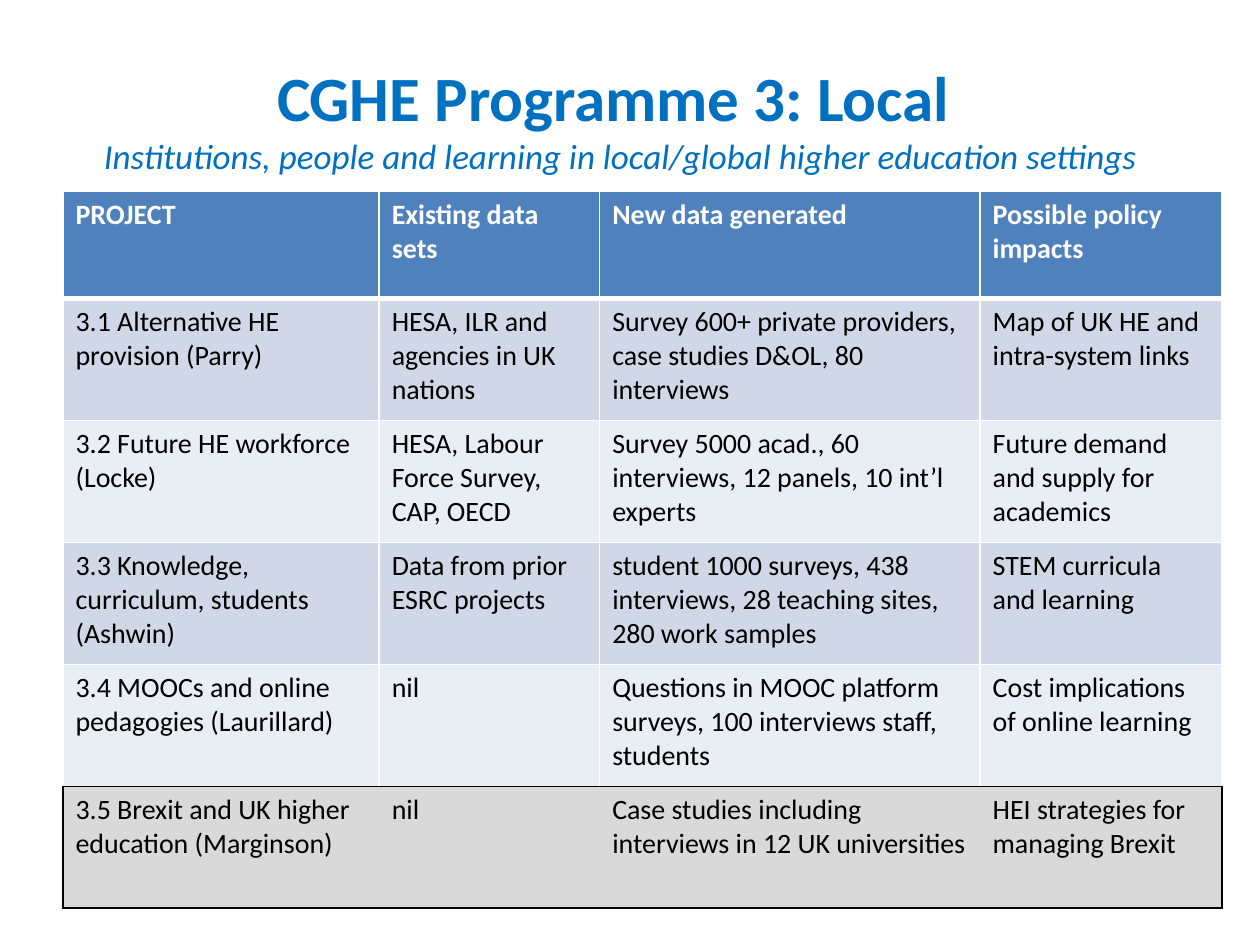
from lxml.etree import SubElement
from pptx import Presentation
from pptx.dml.color import RGBColor
from pptx.enum.text import MSO_ANCHOR, PP_ALIGN
from pptx.oxml.ns import qn
from pptx.util import Pt

BLUE = RGBColor(0x00, 0x70, 0xC0)
HEAD = RGBColor(0x4F, 0x81, 0xBD)
DARK = RGBColor(0xD0, 0xD8, 0xE8)
LIGHT = RGBColor(0xE9, 0xED, 0xF4)
GREY = RGBColor(0xD9, 0xD9, 0xD9)
WHITE = RGBColor(0xFF, 0xFF, 0xFF)
BLACK = RGBColor(0x00, 0x00, 0x00)


def write(para, text, size=16, color=BLACK, bold=False, italic=False):
    run = para.add_run()
    run.text = text
    font = run.font
    font.name = "Calibri"
    font.size = Pt(size)
    font.bold = bold
    font.italic = italic
    font.color.rgb = color


def edge(cell, side, color, width=1):
    props = cell._tc.get_or_add_tcPr()
    line = SubElement(props, qn("a:ln" + side), w=str(Pt(width)))
    if color is None:
        SubElement(line, qn("a:noFill"))
    else:
        fill = SubElement(line, qn("a:solidFill"))
        SubElement(fill, qn("a:srgbClr"), val=str(color))


deck = Presentation()
deck.slide_width = Pt(720)
deck.slide_height = Pt(540)
slide = deck.slides.add_slide(deck.slide_layouts[6])

title = slide.shapes.add_textbox(Pt(36), Pt(21.6), Pt(637.2), Pt(91.4))
frame = title.text_frame
frame.word_wrap = True
frame.vertical_anchor = MSO_ANCHOR.MIDDLE
para = frame.paragraphs[0]
para.alignment = PP_ALIGN.CENTER
write(para, "CGHE Programme 3: Local ", size=36, color=BLUE, bold=True)
para.add_line_break()
write(para, "Institutions, people and learning in local/global higher education settings",
      size=20, color=BLUE, italic=True)

rows = [
    ("PROJECT", "Existing data sets", "New data generated", "Possible policy impacts"),
    ("3.1 Alternative HE provision (Parry)",
     "HESA, ILR and agencies in UK nations",
     "Survey 600+ private providers, case studies D&OL, 80 interviews",
     "Map of UK HE and intra-system links"),
    ("3.2 Future HE workforce (Locke)",
     "HESA, Labour Force Survey, CAP, OECD",
     "Survey 5000 acad., 60 interviews, 12 panels, 10 int’l experts",
     "Future demand and supply for academics"),
    ("3.3 Knowledge, curriculum, students (Ashwin)",
     "Data from prior ESRC projects",
     "student 1000 surveys, 438 interviews, 28 teaching sites, 280 work samples",
     "STEM curricula and learning"),
    ("3.4 MOOCs and online pedagogies (Laurillard)",
     "nil",
     "Questions in MOOC platform surveys, 100 interviews staff, students",
     "Cost implications of online learning"),
    ("3.5 Brexit and UK higher education (Marginson)",
     "nil",
     "Case studies including interviews in 12 UK universities",
     "HEI strategies for managing Brexit"),
]
widths = [180.7, 126, 217.4, 138.3]
fills = [HEAD, DARK, LIGHT, DARK, LIGHT, GREY]
rules = [(WHITE, 1), (WHITE, 3), (WHITE, 1), (WHITE, 1), (WHITE, 1), (BLACK, 1), (BLACK, 1)]
last = len(rows) - 1
end = len(widths) - 1

table = slide.shapes.add_table(len(rows), len(widths), Pt(36), Pt(109.4),
                               Pt(sum(widths)), Pt(409.7)).table
for col, width in zip(table.columns, widths):
    col.width = Pt(width)

for r, texts in enumerate(rows):
    table.rows[r].height = Pt(69.7 if r else 61.2)
    for c, text in enumerate(texts):
        cell = table.cell(r, c)
        left = right = WHITE
        if r == last:
            left = BLACK if c == 0 else None
            right = BLACK if c == end else None
        edge(cell, "L", left)
        edge(cell, "R", right)
        edge(cell, "T", *rules[r])
        edge(cell, "B", *rules[r + 1])
        cell.fill.solid()
        cell.fill.fore_color.rgb = fills[r]
        write(cell.text_frame.paragraphs[0], text,
              color=BLACK if r else WHITE, bold=r == 0)

deck.save("out.pptx")
